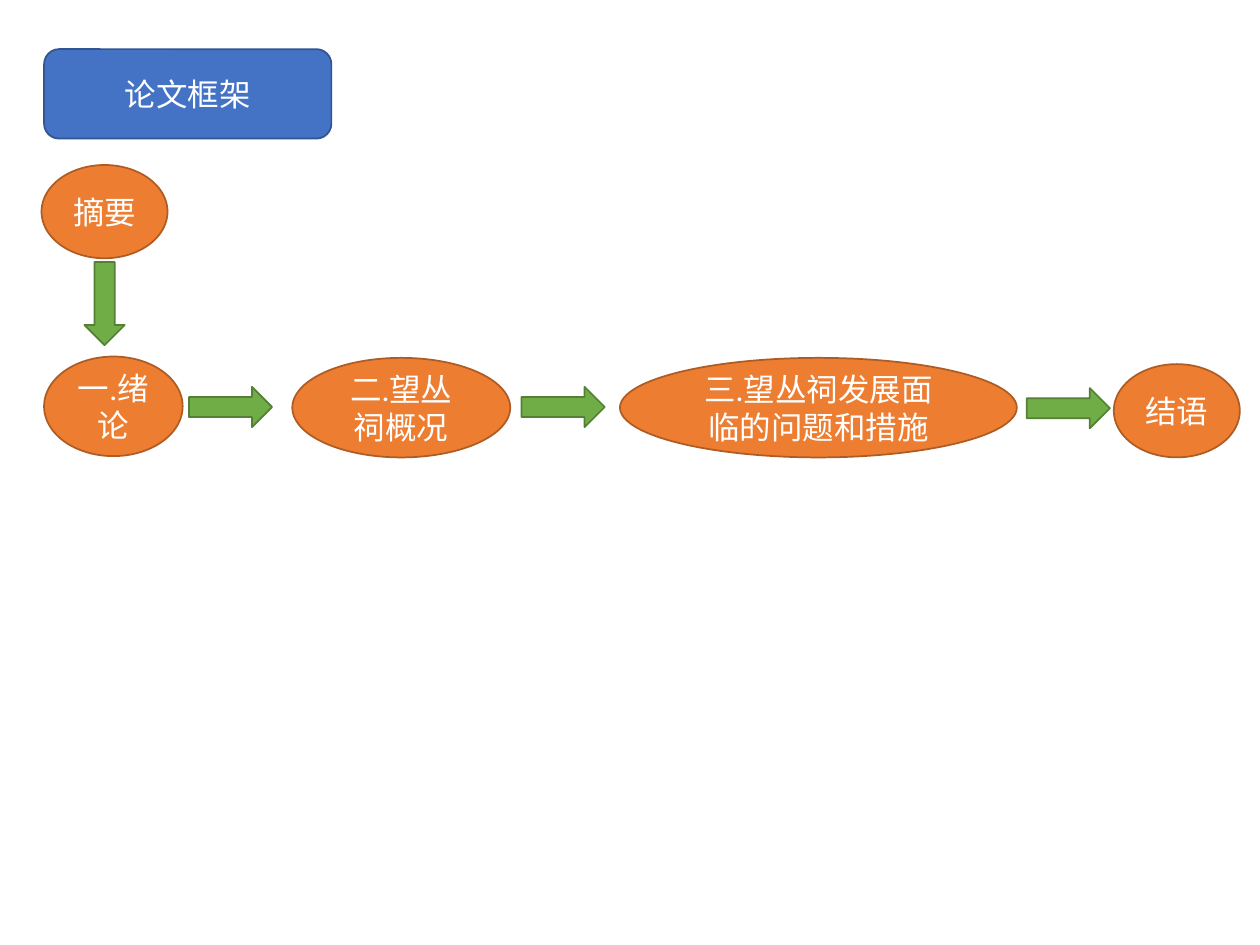
from pptx import Presentation
from pptx.dml.color import RGBColor
from pptx.enum.shapes import MSO_SHAPE as Shape
from pptx.enum.text import MSO_ANCHOR, PP_ALIGN
from pptx.util import Inches, Pt

WHITE = RGBColor(0xFF, 0xFF, 0xFF)
BLUE, BLUE_EDGE = RGBColor(0x44, 0x72, 0xC4), RGBColor(0x32, 0x54, 0x91)
ORANGE, ORANGE_EDGE = RGBColor(0xED, 0x7D, 0x31), RGBColor(0xAF, 0x5C, 0x24)
GREEN, GREEN_EDGE = RGBColor(0x70, 0xAD, 0x47), RGBColor(0x53, 0x80, 0x35)

# Content: text, then left, top, width, height in inches
HEADING = ("论文框架", 0.35, 0.39, 2.28, 0.71)
CHAPTERS = [
    ("摘要", 0.33, 1.31, 1.0, 0.74),
    ("一.绪论", 0.35, 2.83, 1.1, 0.79),
    ("二.望丛祠概况", 2.32, 2.84, 1.73, 0.79),
    ("三.望丛祠发展面临的问题和措施", 4.92, 2.84, 3.15, 0.79),
    ("结语", 8.84, 2.89, 1.0, 0.74),
]
# Arrows: centre x, centre y, rotation (270 turns a down arrow to the right)
ARROW_WIDTH, ARROW_LENGTH = 0.32, 0.66
ARROWS = [(0.83, 2.41, 0), (1.83, 3.23, 270), (4.47, 3.23, 270), (8.48, 3.24, 270)]


def add_block(slide, kind, box, fill, edge, text=""):
    shape = slide.shapes.add_shape(kind, *map(Inches, box))
    shape.shadow.inherit = False
    shape.fill.solid()
    shape.fill.fore_color.rgb = fill
    shape.line.color.rgb = edge
    shape.line.width = Pt(1)
    if text:
        frame = shape.text_frame
        frame.word_wrap = True
        frame.vertical_anchor = MSO_ANCHOR.MIDDLE
        paragraph = frame.paragraphs[0]
        paragraph.text = text
        paragraph.alignment = PP_ALIGN.CENTER
        paragraph.font.name = "Calibri"
        paragraph.font.size = Pt(18)
        paragraph.font.color.rgb = WHITE
    return shape


def main():
    presentation = Presentation()
    presentation.slide_width, presentation.slide_height = Inches(10), Inches(7.5)
    slide = presentation.slides.add_slide(presentation.slide_layouts[6])

    # Heading
    text, *box = HEADING
    add_block(slide, Shape.ROUNDED_RECTANGLE, box, BLUE, BLUE_EDGE, text)

    # Chapters
    for text, *box in CHAPTERS:
        add_block(slide, Shape.OVAL, box, ORANGE, ORANGE_EDGE, text)

    # Arrows between consecutive chapters
    for center_x, center_y, rotation in ARROWS:
        box = (center_x - ARROW_WIDTH / 2, center_y - ARROW_LENGTH / 2,
               ARROW_WIDTH, ARROW_LENGTH)
        arrow = add_block(slide, Shape.DOWN_ARROW, box, GREEN, GREEN_EDGE)
        arrow.rotation = rotation

    presentation.save("out.pptx")


if __name__ == "__main__":
    main()
